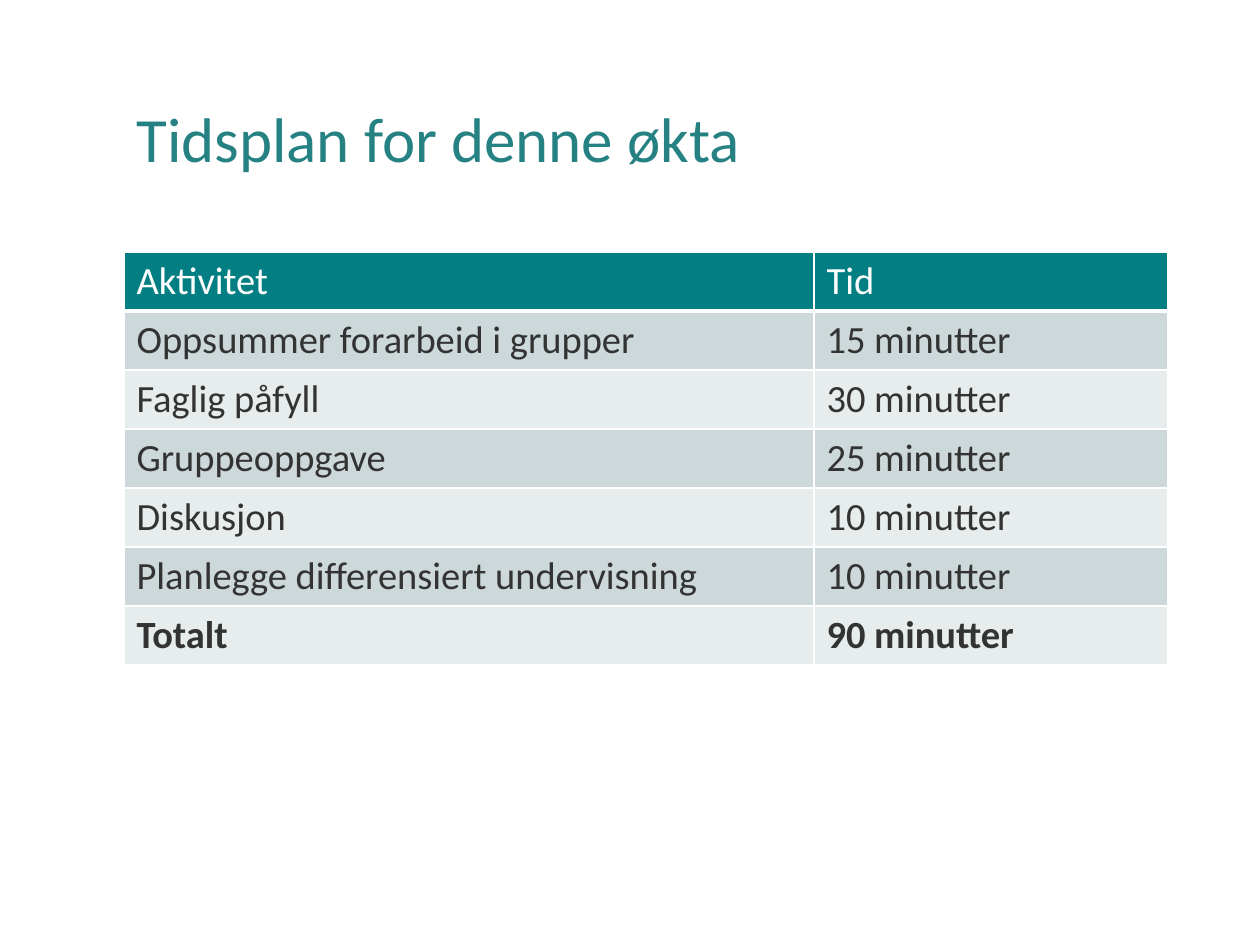
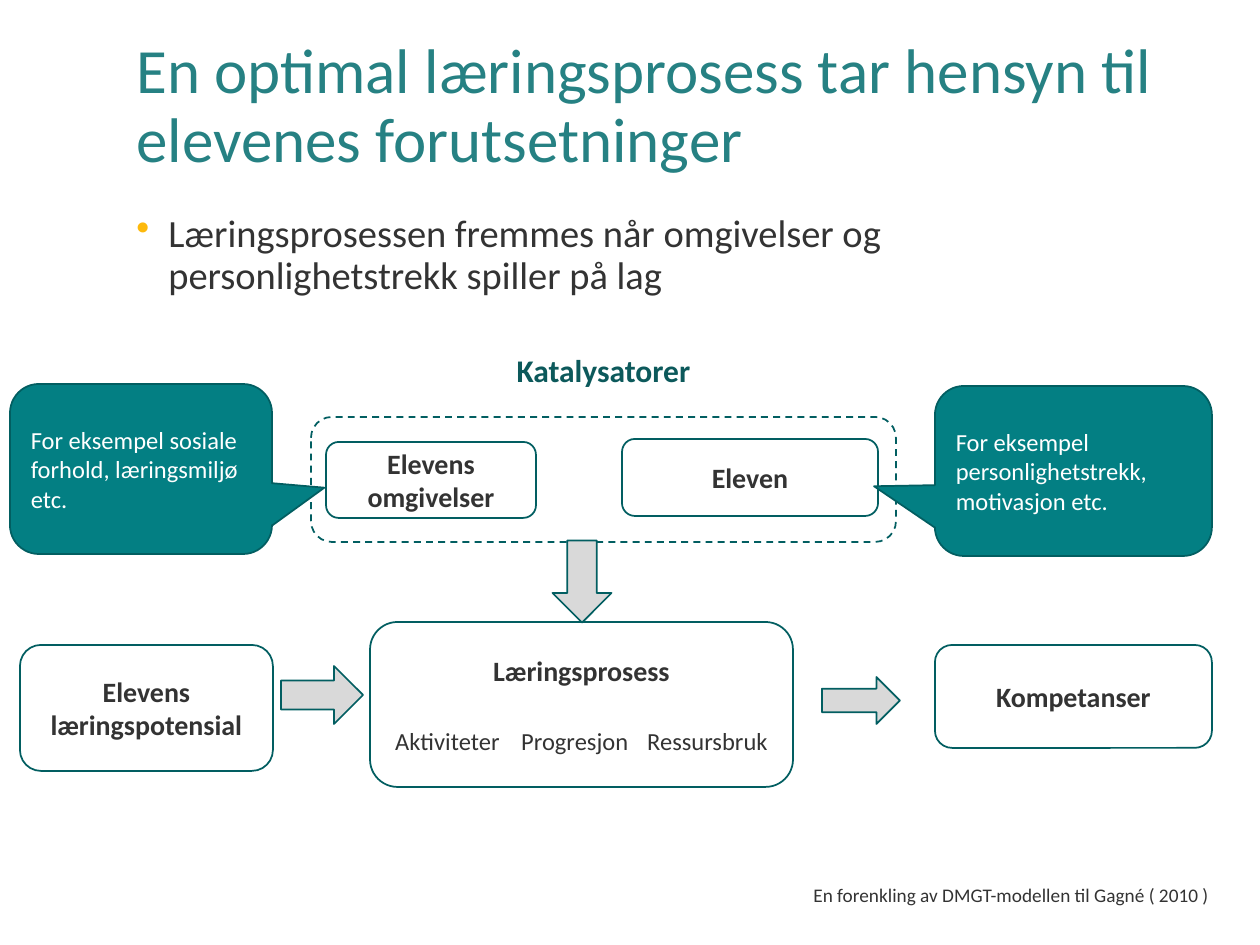
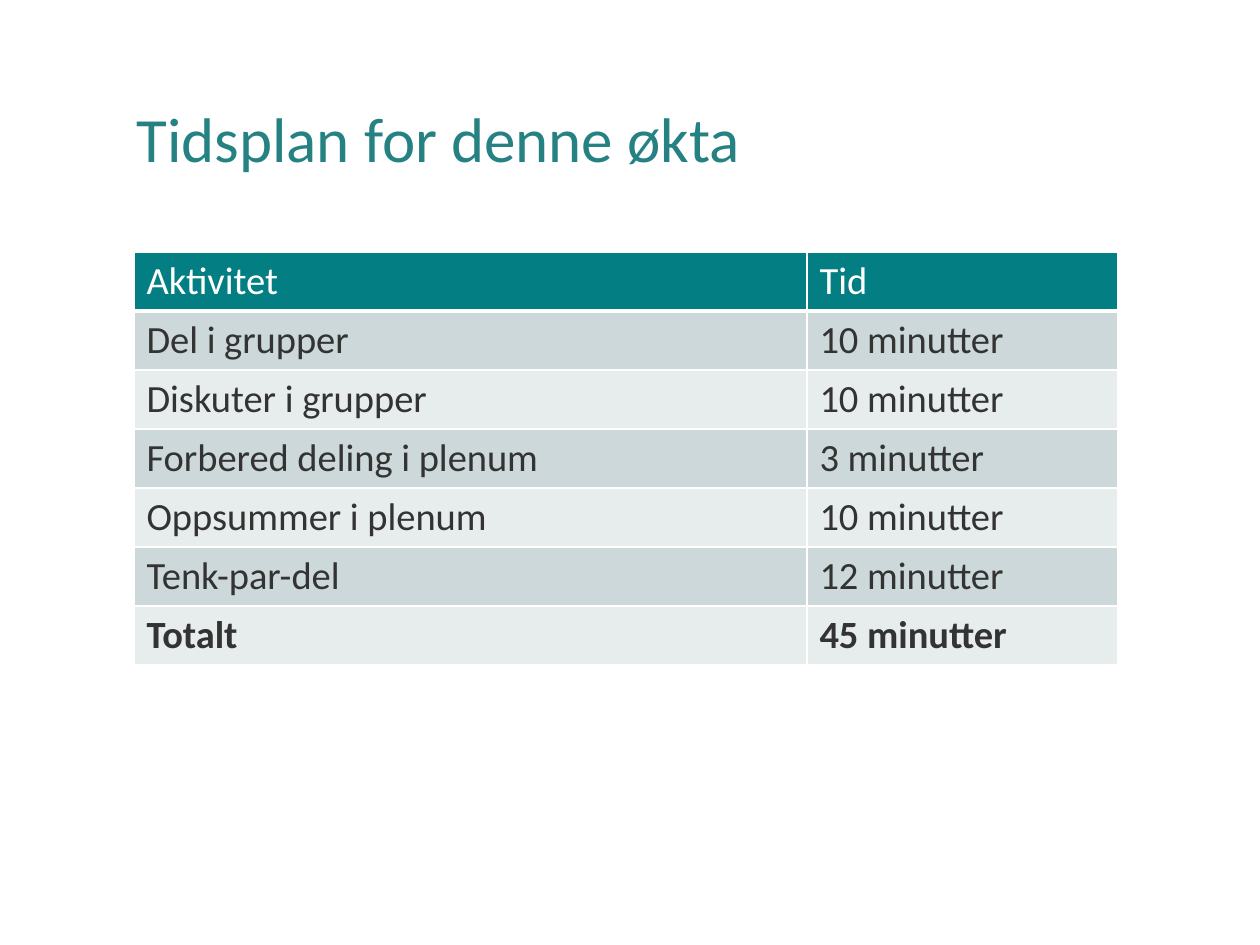
import pptx
import pptx.chart.data
import pptx.dml.color
import pptx.enum.dml
import pptx.enum.shapes
import pptx.enum.text
import pptx.oxml.ns
import pptx.util
from lxml import etree

# Shared look
FONT = "Calibri"
TITLE, TEAL, EDGE, DEEP = "268183", "037F83", "025E61", "0C595B"
INK, WHITE, GREY, GOLD = "333333", "FFFFFF", "D9D9D9", "FDB90C"
BANDS = ["CCD8D9", "E7ECED"]
FRAME = (124, 50, 1045, 183)
ROW = 59

SHAPE = pptx.enum.shapes.MSO_SHAPE
ALIGN = pptx.enum.text.PP_ALIGN
ANCHOR = pptx.enum.text.MSO_ANCHOR


def px(n):
    return pptx.util.Emu(round(n * 914400 / 126))


def color(code):
    return pptx.dml.color.RGBColor.from_string(code)


def node(parent, tag, **attrs):
    return etree.SubElement(parent, pptx.oxml.ns.qn("a:" + tag), attrs)


def style(para, size, ink=INK, bold=False, align=ALIGN.LEFT):
    para.alignment = align
    font = para.font
    font.name, font.size, font.bold = FONT, pptx.util.Pt(size), bold
    font.color.rgb = color(ink)


def label(slide, box, text, size, ink=INK, bold=False, align=ALIGN.LEFT,
          anchor=ANCHOR.TOP):
    frame = slide.shapes.add_textbox(*map(px, box)).text_frame
    frame.word_wrap = True
    frame.vertical_anchor = anchor
    para = frame.paragraphs[0]
    para.text = text
    style(para, size, ink, bold, align)
    return frame


def title(slide, text, below=6):
    frame = label(slide, FRAME, text, 36, TITLE, anchor=ANCHOR.MIDDLE)
    frame.margin_bottom = px(below)
    frame.paragraphs[0].line_spacing = 0.9


def shape(slide, kind, box, fill=WHITE):
    item = slide.shapes.add_shape(kind, *map(px, box))
    item.shadow.inherit = False
    if fill:
        item.fill.solid()
        item.fill.fore_color.rgb = color(fill)
    else:
        item.fill.background()
    item.line.color.rgb = color(EDGE)
    item.line.width = pptx.util.Pt(1)
    return item


def card(slide, box, text):
    frame = shape(slide, SHAPE.ROUNDED_RECTANGLE, box).text_frame
    frame.word_wrap = True
    frame.vertical_anchor = ANCHOR.MIDDLE
    para = frame.paragraphs[0]
    para.text = text
    style(para, 16, bold=True, align=ALIGN.CENTER)
    return frame


def callout(slide, box, tip, text):
    item = shape(slide, SHAPE.ROUNDED_RECTANGULAR_CALLOUT, box, TEAL)
    for i, value in enumerate(tip):
        item.adjustments[i] = value
    frame = item.text_frame
    frame.word_wrap = True
    frame.vertical_anchor = ANCHOR.MIDDLE
    frame.paragraphs[0].text = text
    style(frame.paragraphs[0], 14, WHITE)


def arrow(slide, box, turn=0):
    shape(slide, SHAPE.RIGHT_ARROW, box, GREY).rotation = turn


def border(cell, top, bottom):
    props = cell._tc.get_or_add_tcPr()
    for side, width in (("L", 1), ("R", 1), ("T", top), ("B", bottom)):
        line = node(props, "ln" + side, w=str(pptx.util.Pt(width)))
        node(node(line, "solidFill"), "srgbClr", val=WHITE)


def plan(slide, left, widths, rows):
    """Timetable slide: header, banded rows and a bold total."""
    title(slide, "Tidsplan for denne økta")
    rows = [("Aktivitet", "Tid")] + rows
    last = len(rows) - 1
    box = (left, 252, sum(widths), ROW * len(rows))
    grid = slide.shapes.add_table(len(rows), 2, *map(px, box)).table
    grid.first_row = grid.horz_banding = False
    for col, width in zip(grid.columns, widths):
        col.width = px(width)
    for r, row in enumerate(rows):
        grid.rows[r].height = px(ROW)
        for c, text in enumerate(row):
            cell = grid.cell(r, c)
            border(cell, 3 if r == 1 else 1, 3 if r == 0 else 1)
            cell.fill.solid()
            cell.fill.fore_color.rgb = color(BANDS[(r - 1) % 2] if r else TEAL)
            para = cell.text_frame.paragraphs[0]
            para.text = text
            style(para, 22, INK if r else WHITE, r == last)


def point(slide, box, text):
    """Bulleted statement."""
    para = label(slide, box, text, 22).paragraphs[0]
    para.line_spacing = 0.9
    props = para._p.get_or_add_pPr()
    props.set("marL", str(px(32)))
    props.set("indent", str(-px(32)))
    font = props.find(pptx.oxml.ns.qn("a:defRPr"))
    tint = node(props, "buClr")
    node(tint, "srgbClr", val=GOLD)
    mark = node(props, "buChar", char="•")
    font.addprevious(tint)
    font.addprevious(mark)


def factors(slide, x, y):
    """Catalysts: dashed group, its two cards and their callouts."""
    label(slide, (x, y - 70, 585, 46), "Katalysatorer", 18, DEEP, True,
          ALIGN.CENTER, ANCHOR.MIDDLE)
    group = shape(slide, SHAPE.ROUNDED_RECTANGLE, (x, y, 585, 125), None)
    group.line.dash_style = pptx.enum.dml.MSO_LINE.DASH
    card(slide, (x + 15, y + 25, 210, 76), "Elevens omgivelser")
    card(slide, (x + 311, y + 22, 256, 77), "Eleven")
    callout(slide, (x + 624, y - 31, 277, 170), (-0.72, 0.09, 0.17),
            "For eksempel personlighetstrekk, motivasjon etc.")
    callout(slide, (x - 301, y - 33, 262, 170), (0.7, 0.11, 0.17),
            "For eksempel sosiale forhold, læringsmiljø etc.")


def flow(slide, x, y):
    """Potential, process and skills, joined by arrows."""
    card(slide, (x, y + 23, 253, 126), "Elevens læringspotensial")
    frame = card(slide, (x + 350, y, 423, 165), "Læringsprosess")
    card(slide, (x + 915, y + 23, 277, 103), "Kompetanser")

    # Three aspects of the process on even tab stops
    para = frame.add_paragraph()
    para.text = "Aktiviteter\tProgresjon\tRessursbruk"
    para.space_before = pptx.util.Pt(22)
    tabs = node(para._p.get_or_add_pPr(), "tabLst")
    for stop in (126, 252):
        node(tabs, "tab", pos=str(px(stop)), algn="l")
    style(para, 14, align=ALIGN.CENTER)

    arrow(slide, (x + 261, y + 44, 82, 58))
    arrow(slide, (x + 802, y + 55, 78, 47))
    arrow(slide, (x + 521, y - 70, 82, 59), 90)


def model(slide):
    """Learning process slide."""
    title(slide, "En optimal læringsprosess tar hensyn til "
                 "elevenes forutsetninger", below=74)
    point(slide, (124, 208, 1045, 347),
          "Læringsprosessen fremmes når omgivelser og "
          "personlighetstrekk spiller på lag")
    factors(slide, 311, 417)
    flow(slide, 20, 622)
    label(slide, (801, 877, 441, 37),
          "En forenkling av DMGT-modellen til Gagné ( 2010 )", 11)


def main():
    deck = pptx.Presentation()
    deck.slide_width, deck.slide_height = px(1260), px(945)
    first, second, third = (
        deck.slides.add_slide(deck.slide_layouts[6]) for _ in range(3))
    plan(first, 124, (690, 354), [
        ("Oppsummer forarbeid i grupper", "15 minutter"),
        ("Faglig påfyll", "30 minutter"),
        ("Gruppeoppgave", "25 minutter"),
        ("Diskusjon", "10 minutter"),
        ("Planlegge differensiert undervisning", "10 minutter"),
        ("Totalt", "90 minutter"),
    ])
    model(second)
    plan(third, 134, (673, 311), [
        ("Del i grupper", "10 minutter"),
        ("Diskuter i grupper", "10 minutter"),
        ("Forbered deling i plenum", "3 minutter"),
        ("Oppsummer i plenum", "10 minutter"),
        ("Tenk-par-del", "12 minutter"),
        ("Totalt", "45 minutter"),
    ])
    deck.save("out.pptx")


if __name__ == "__main__":
    main()
